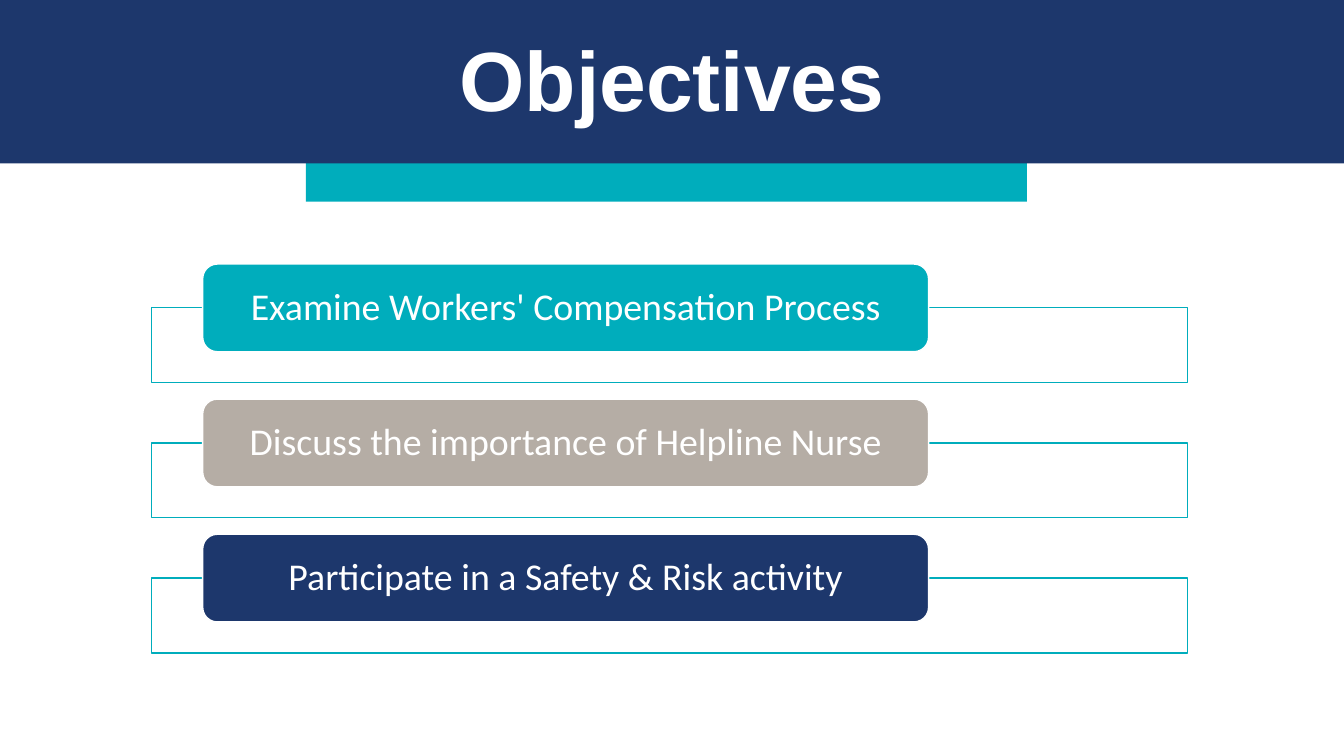
from dataclasses import dataclass

from lxml import etree
from pptx import Presentation
from pptx import util as u
from pptx.dml.color import RGBColor
from pptx.enum import shapes, text
from pptx.oxml.ns import qn
from pptx.shapes.autoshape import Shape
from pptx.slide import Slide

WIDTH, HEIGHT = u.Inches(13.33), u.Inches(7.5)
COLOURS = {"teal": "00ADBC", "navy": "1D376C", "stone": "B5ADA5", "white": "FFFFFF"}
OBJECTIVE_STEP = 17.87


@dataclass(frozen=True)
class Area:
    """Left, top, width and height in percent of the slide."""

    left: float
    top: float
    width: float
    height: float

    def lengths(self) -> tuple[int, int, int, int]:
        return (
            round(WIDTH * self.left / 100),
            round(HEIGHT * self.top / 100),
            round(WIDTH * self.width / 100),
            round(HEIGHT * self.height / 100),
        )

    def lowered(self, distance: float) -> "Area":
        return Area(self.left, self.top + distance, self.width, self.height)


@dataclass(frozen=True)
class Lettering:
    font: str
    size: float
    colour: str
    bold: bool = False


@dataclass(frozen=True)
class Objective:
    wording: str
    colour: str


TITLE = Lettering("Arial", 60, "white", True)
LABEL = Lettering("Calibri", 27, "white")

ACCENT_AREA = Area(22.76, 18.4, 53.64, 8.27)
BAND_AREA = Area(0, 0, 100, 21.6)
TITLE_AREA = Area(0, 4.27, 100, 13.73)
FRAME_AREA = Area(11.25, 40.72, 77.12, 9.9)
LABEL_AREA = Area(15.08, 34.93, 54.01, 11.6)

OBJECTIVES = [
    Objective("Examine Workers' Compensation Process", "teal"),
    Objective("Discuss the importance of Helpline Nurse", "stone"),
    Objective("Participate in a Safety & Risk activity", "navy"),
]


def colour_of(name: str) -> RGBColor:
    return RGBColor.from_string(COLOURS[name])


def add_block(
    slide: Slide,
    area: Area,
    fill: str,
    line: str | None = None,
    kind: shapes.MSO_SHAPE = shapes.MSO_SHAPE.RECTANGLE,
) -> Shape:
    shape = slide.shapes.add_shape(kind, *area.lengths())
    shape.shadow.inherit = False
    shape.fill.solid()
    shape.fill.fore_color.rgb = colour_of(fill)
    if line is None:
        shape.line.fill.background()
    else:
        shape.line.color.rgb = colour_of(line)
        shape.line.width = u.Pt(1)
    return shape


def write(
    shape: Shape, wording: str, lettering: Lettering, spacing: float | u.Length
) -> None:
    shape.text_frame.word_wrap = True
    paragraph = shape.text_frame.paragraphs[0]
    paragraph.alignment = text.PP_ALIGN.CENTER
    paragraph.line_spacing = spacing
    run = paragraph.add_run()
    run.text = wording
    run.font.name = lettering.font
    run.font.size = u.Pt(lettering.size)
    run.font.bold = lettering.bold
    run.font.color.rgb = colour_of(lettering.colour)


def set_opacity(shape: Shape, percent: int) -> None:
    fill_colour = shape.fill._xPr.find(qn("a:solidFill"))[0]
    etree.SubElement(fill_colour, qn("a:alpha"), val=str(percent * 1000))


def add_objective(slide: Slide, objective: Objective, distance: float) -> None:
    frame = add_block(slide, FRAME_AREA.lowered(distance), "white", "teal")
    set_opacity(frame, 90)
    label = add_block(
        slide,
        LABEL_AREA.lowered(distance),
        objective.colour,
        "white",
        shapes.MSO_SHAPE.ROUNDED_RECTANGLE,
    )
    text_frame = label.text_frame
    text_frame.margin_left = text_frame.margin_right = u.Inches(0.27)
    text_frame.margin_top = text_frame.margin_bottom = 0
    text_frame.vertical_anchor = text.MSO_ANCHOR.MIDDLE
    write(label, objective.wording, LABEL, 0.9)


def main() -> None:
    presentation = Presentation()
    presentation.slide_width, presentation.slide_height = WIDTH, HEIGHT
    slide = presentation.slides.add_slide(presentation.slide_layouts[6])

    add_block(slide, ACCENT_AREA, "teal")
    add_block(slide, BAND_AREA, "navy")
    title = slide.shapes.add_textbox(*TITLE_AREA.lengths())
    write(title, "Objectives", TITLE, u.Pt(65))
    for index, objective in enumerate(OBJECTIVES):
        add_objective(slide, objective, index * OBJECTIVE_STEP)

    presentation.save("out.pptx")


if __name__ == "__main__":
    main()
